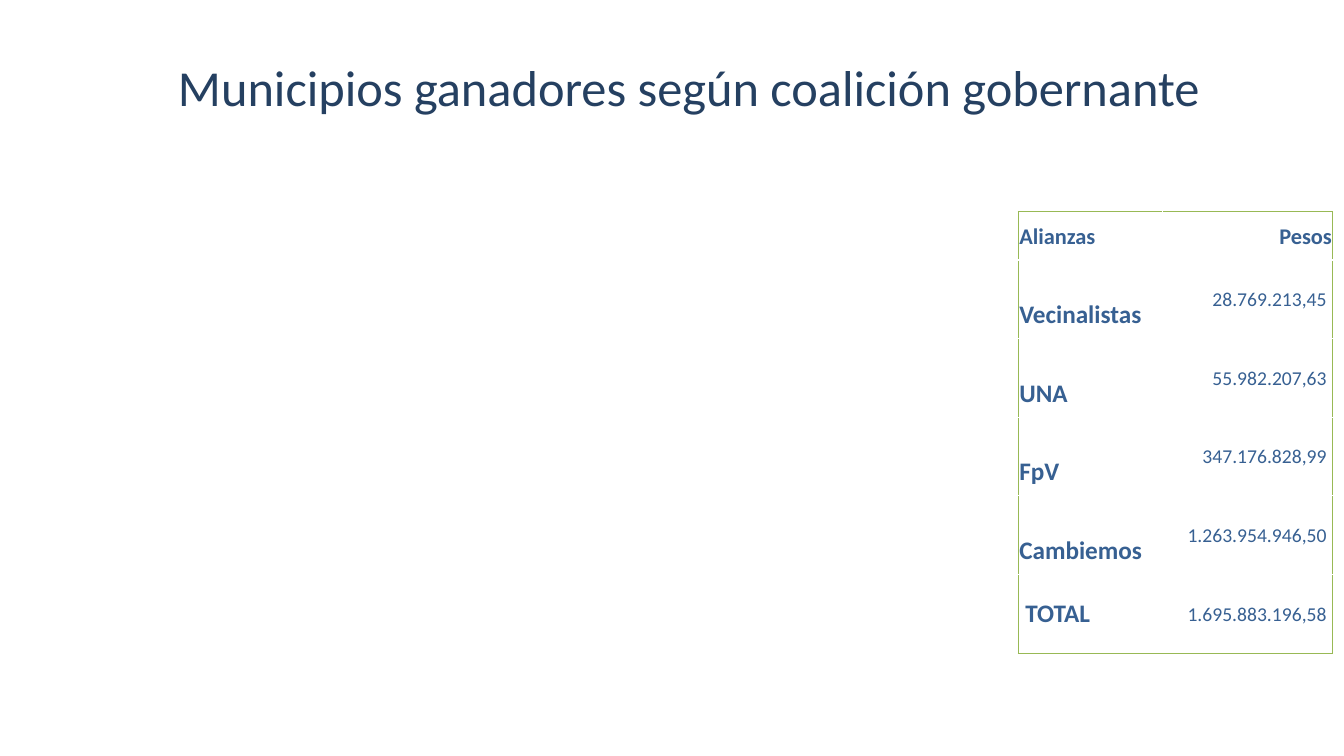
from lxml import etree
from pptx import Presentation
from pptx.dml.color import RGBColor
from pptx.enum import text
from pptx.oxml import ns
from pptx.util import Inches, Pt

NAVY = RGBColor(0x25, 0x40, 0x61)
BLUE = RGBColor(0x37, 0x60, 0x92)
GREEN = RGBColor(0x98, 0xB9, 0x55)
FONT = "Calibri"

ROWS = [
    ("Alianzas", "Pesos"),
    ("Vecinalistas", "28.769.213,45"),
    ("UNA", "55.982.207,63"),
    ("FpV", "347.176.828,99"),
    ("Cambiemos", "1.263.954.946,50"),
    ("TOTAL", "1.695.883.196,58"),
]
LAST = len(ROWS) - 1


def style_text(para, size, color, bold=False):
    for span in para.runs:
        span.font.name = FONT
        span.font.size = Pt(size)
        span.font.bold = bold
        span.font.color.rgb = color


def add_border(cell, side):
    props = cell._tc.get_or_add_tcPr()
    line = etree.SubElement(props, ns.qn(f"a:ln{side}"), w=str(Pt(0.75)))
    fill = etree.SubElement(line, ns.qn("a:solidFill"))
    etree.SubElement(fill, ns.qn("a:srgbClr"), val=str(GREEN))


deck = Presentation()
deck.slide_width, deck.slide_height = Inches(13.33), Inches(7.5)
page = deck.slides.add_slide(deck.slide_layouts[5])

# Title
title = page.shapes.title
title.left, title.top = Inches(1.58), Inches(0.16)
title.width, title.height = Inches(10.51), Inches(1.4)
title.text_frame.text = "Municipios ganadores según coalición gobernante"
title.text_frame.vertical_anchor = text.MSO_ANCHOR.MIDDLE
title.text_frame.paragraphs[0].alignment = text.PP_ALIGN.CENTER
style_text(title.text_frame.paragraphs[0], 36, NAVY)

# Table frame
table = page.shapes.add_table(
    len(ROWS), 2, Inches(10.1), Inches(2.1), Inches(3.12), Inches(4.38)
).table
table.first_row = table.horz_banding = False
table.columns[0].width, table.columns[1].width = Inches(1.43), Inches(1.69)

# Cells: bold names at left, amounts at right, green outline
for r, values in enumerate(ROWS):
    table.rows[r].height = Inches(0.78 if r else 0.48)
    for c, value in enumerate(values):
        cell = table.cell(r, c)
        cell.text_frame.text = value
        cell.vertical_anchor = text.MSO_ANCHOR.MIDDLE
        name_lowered = c == 0 and 0 < r < LAST
        cell.margin_top = Inches(0.31 if name_lowered else 0.01)
        cell.margin_left = Inches(0.07 if c == 0 and r == LAST else 0.01)
        cell.margin_right = Inches(0.06 if c == 1 and r else 0.01)
        cell.margin_bottom = 0

        para = cell.text_frame.paragraphs[0]
        para.alignment = text.PP_ALIGN.RIGHT if c else text.PP_ALIGN.LEFT
        size = 16 if r == 0 else 14 if c else 18
        style_text(para, size, BLUE, bold=c == 0 or r == 0)

        add_border(cell, "R" if c else "L")
        if r == 0:
            add_border(cell, "T")
        if r == LAST:
            add_border(cell, "B")
        cell.fill.background()

deck.save("out.pptx")
